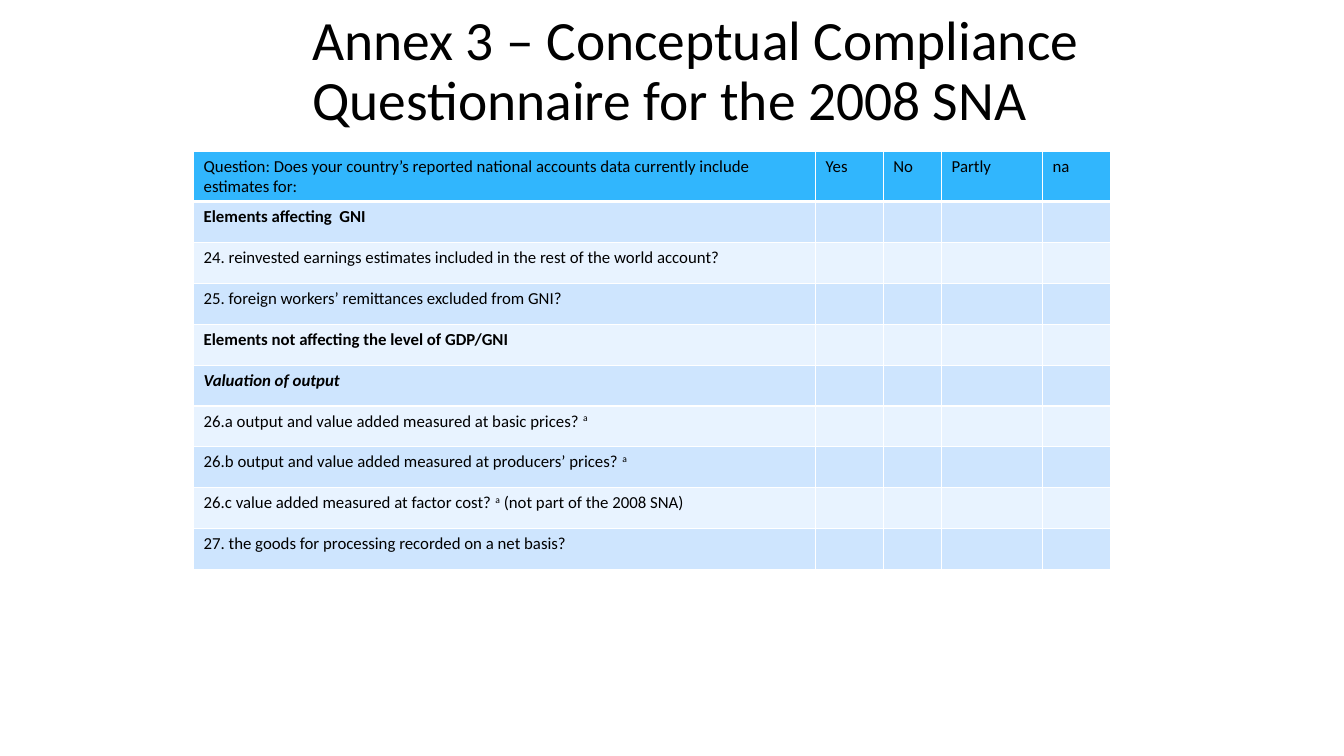
from lxml.etree import SubElement
from pptx import Presentation
from pptx.dml.color import RGBColor
from pptx.enum.text import MSO_ANCHOR
from pptx.oxml.ns import qn
from pptx.util import Inches, Pt

COLORS = {"text": "000000", "header": "31B6FD", "dark_band": "CEE5FE",
          "light_band": "E8F3FF", "border": "FFFFFF"}
FONT = "Calibri"
TITLE = "Annex 3 – Conceptual Compliance Questionnaire for the 2008 SNA"
HEADERS = ["Question: Does your country’s reported national accounts data currently include estimates for:",
           "Yes", "No", "Partly", "na"]
COLUMN_WIDTHS = [6.17, 0.67, 0.58, 1, 0.68]
HEADER_HEIGHT = 0.5

# Each question: its text parts (every second part is superscript), then its style
QUESTIONS = [
    (["Elements affecting  GNI"], "bold"),
    (["24. reinvested earnings estimates included in the rest of the world account?"], ""),
    (["25. foreign workers’ remittances excluded from GNI?"], ""),
    (["Elements not affecting the level of GDP/GNI"], "bold"),
    (["Valuation of output"], "bold italic"),
    (["26.a output and value added measured at basic prices? ", "a"], ""),
    (["26.b output and value added measured at producers’ prices? ", "a"], ""),
    (["26.c value added measured at factor cost? ", "a", " (not part of the 2008 SNA)"], ""),
    (["27. the goods for processing recorded on a net basis?"], ""),
]


def format_run(run, size, style=""):
    run.font.name = FONT
    run.font.size = Pt(size)
    run.font.bold = "bold" in style
    run.font.italic = "italic" in style
    run.font.color.rgb = RGBColor.from_string(COLORS["text"])


def write_cell(cell, parts, style=""):
    paragraph = cell.text_frame.paragraphs[0]
    for index, part in enumerate(parts):
        run = paragraph.add_run()
        run.text = part
        format_run(run, 12, style)
        if index % 2:
            run.font._element.set("baseline", "30000")


def paint_cell(cell, color, top=1, bottom=1):
    # Borders come before the fill in the cell properties
    properties = cell._tc.get_or_add_tcPr()
    for side, width in (("L", 1), ("R", 1), ("T", top), ("B", bottom)):
        line = SubElement(properties, qn(f"a:ln{side}"), w=str(Pt(width)))
        line_fill = SubElement(line, qn("a:solidFill"))
        SubElement(line_fill, qn("a:srgbClr"), val=COLORS["border"])
    cell.fill.solid()
    cell.fill.fore_color.rgb = RGBColor.from_string(COLORS[color])


def add_title(slide, left, top, width, height):
    text_frame = slide.shapes.add_textbox(
        Inches(left), Inches(top), Inches(width), Inches(height)).text_frame
    text_frame.word_wrap = True
    text_frame.vertical_anchor = MSO_ANCHOR.MIDDLE
    text_frame.text = TITLE
    paragraph = text_frame.paragraphs[0]
    paragraph.line_spacing = 0.9
    format_run(paragraph.runs[0], 39.6)


def add_questionnaire(slide, left, top, width, height):
    table = slide.shapes.add_table(
        len(QUESTIONS) + 1, len(HEADERS),
        Inches(left), Inches(top), Inches(width), Inches(height)).table
    for column, column_width in zip(table.columns, COLUMN_WIDTHS):
        column.width = Inches(column_width)

    # Header row
    table.rows[0].height = Inches(HEADER_HEIGHT)
    for cell, header in zip(table.rows[0].cells, HEADERS):
        write_cell(cell, [header])
        paint_cell(cell, "header", bottom=3)

    # Banded question rows with empty answer cells
    row_height = (height - HEADER_HEIGHT) / len(QUESTIONS)
    for number, (parts, style) in enumerate(QUESTIONS, start=1):
        row = table.rows[number]
        row.height = Inches(row_height)
        write_cell(row.cells[0], parts, style)
        for cell in row.cells:
            paint_cell(cell, "dark_band" if number % 2 else "light_band",
                       top=3 if number == 1 else 1)


def main():
    presentation = Presentation()
    presentation.slide_width = Inches(13.33)
    presentation.slide_height = Inches(7.5)
    slide = presentation.slides.add_slide(presentation.slide_layouts[6])
    add_title(slide, 3, 0.37, 8.05, 0.7)
    add_questionnaire(slide, 1.92, 1.5, 9.1, 4.15)
    presentation.save("out.pptx")


if __name__ == "__main__":
    main()
